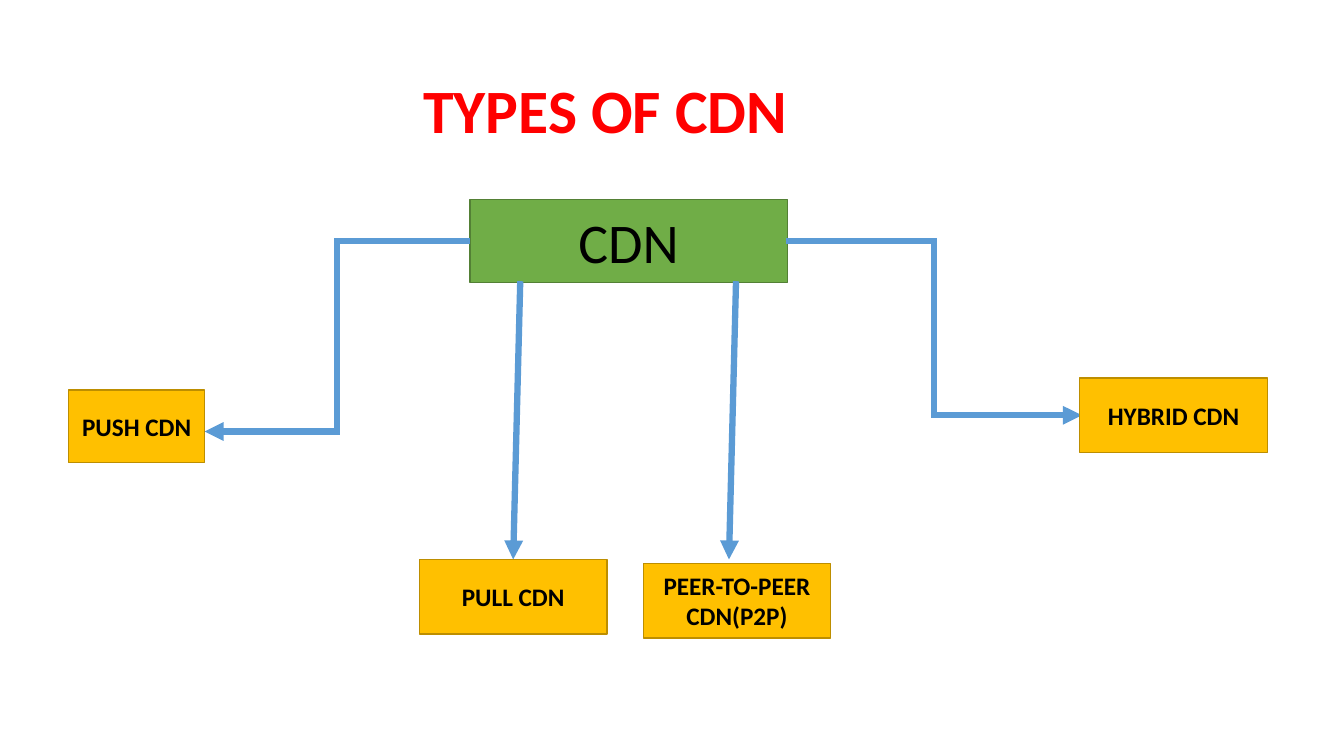
from lxml import etree
from pptx import Presentation
from pptx.dml.color import RGBColor
from pptx.enum.shapes import MSO_CONNECTOR, MSO_SHAPE
from pptx.enum.text import MSO_ANCHOR, PP_ALIGN
from pptx.oxml.ns import qn
from pptx.util import Emu, Pt

RECTANGLE = MSO_SHAPE.RECTANGLE
STRAIGHT, ELBOW = MSO_CONNECTOR.STRAIGHT, MSO_CONNECTOR.ELBOW
CENTER, LEFT = PP_ALIGN.CENTER, PP_ALIGN.LEFT
MIDDLE = MSO_ANCHOR.MIDDLE

EMU_PER_PX = 9144  # 100 px to the inch
TITLE_ONLY = 5
FONT = "Calibri"
COLORS = {
    "title": "FF0000",
    "text": "000000",
    "root": "70AD47",
    "root_line": "538035",
    "type": "FFC000",
    "type_line": "BD8E00",
    "arrow": "5B9BD5",
}

# Label, left, top, width, height
CDN_TYPES = [
    ("PUSH CDN", 68, 387, 135, 72),
    ("PULL CDN", 416, 555, 186, 74),
    ("PEER-TO-PEER CDN(P2P)", 638, 559, 186, 74),
    ("HYBRID CDN", 1071, 375, 186, 74),
]

# Kind, start x, start y, end x, end y
ARROWS = [
    (ELBOW, 466, 239, 203, 428),
    (ELBOW, 780, 239, 1073, 412),
    (STRAIGHT, 516, 279, 509, 555),
    (STRAIGHT, 730, 279, 723, 555),
]


def px(length):
    return Emu(length * EMU_PER_PX)


def color(name):
    return RGBColor.from_string(COLORS[name])


def write(shape, text, size, color_name, bold, align):
    frame = shape.text_frame
    frame.word_wrap = True
    frame.vertical_anchor = MIDDLE
    para = frame.paragraphs[0]
    para.text = text
    para.alignment = align
    font = para.font
    font.name, font.size, font.bold = FONT, Pt(size), bold
    font.color.rgb = color(color_name)


def add_title(page, text):
    title = page.shapes.title
    title.left, title.top, title.width, title.height = map(px, (92, 40, 1150, 145))
    write(title, text, 44, "title", True, LEFT)
    title.text_frame.margin_left = px(328)
    title.text_frame.paragraphs[0].line_spacing = 0.9


def add_box(page, text, bounds, style, size, bold):
    box = page.shapes.add_shape(RECTANGLE, *map(px, bounds))
    box.shadow.inherit = False
    box.fill.solid()
    box.fill.fore_color.rgb = color(style)
    box.line.color.rgb = color(style + "_line")
    box.line.width = Pt(1)
    write(box, text, size, "text", bold, CENTER)


def add_arrow(page, kind, *ends):
    arrow = page.shapes.add_connector(kind, *map(px, ends))
    arrow.line.color.rgb = color("arrow")
    arrow.line.width = Pt(4.5)
    # Sharp corners, arrowhead and no shadow
    properties = arrow.line._get_or_add_ln()
    etree.SubElement(properties, qn("a:miter"), lim="800000")
    etree.SubElement(properties, qn("a:tailEnd"), type="triangle")
    etree.SubElement(properties.getparent(), qn("a:effectLst"))


def main():
    deck = Presentation()
    deck.slide_width, deck.slide_height = px(1333), px(750)
    page = deck.slides.add_slide(deck.slide_layouts[TITLE_ONLY])

    add_title(page, "TYPES OF CDN")
    add_box(page, "CDN", (466, 198, 315, 82), "root", 40, False)
    for arrow in ARROWS:
        add_arrow(page, *arrow)
    for label, *bounds in CDN_TYPES:
        add_box(page, label, bounds, "type", 18, True)

    deck.save("out.pptx")


if __name__ == "__main__":
    main()
